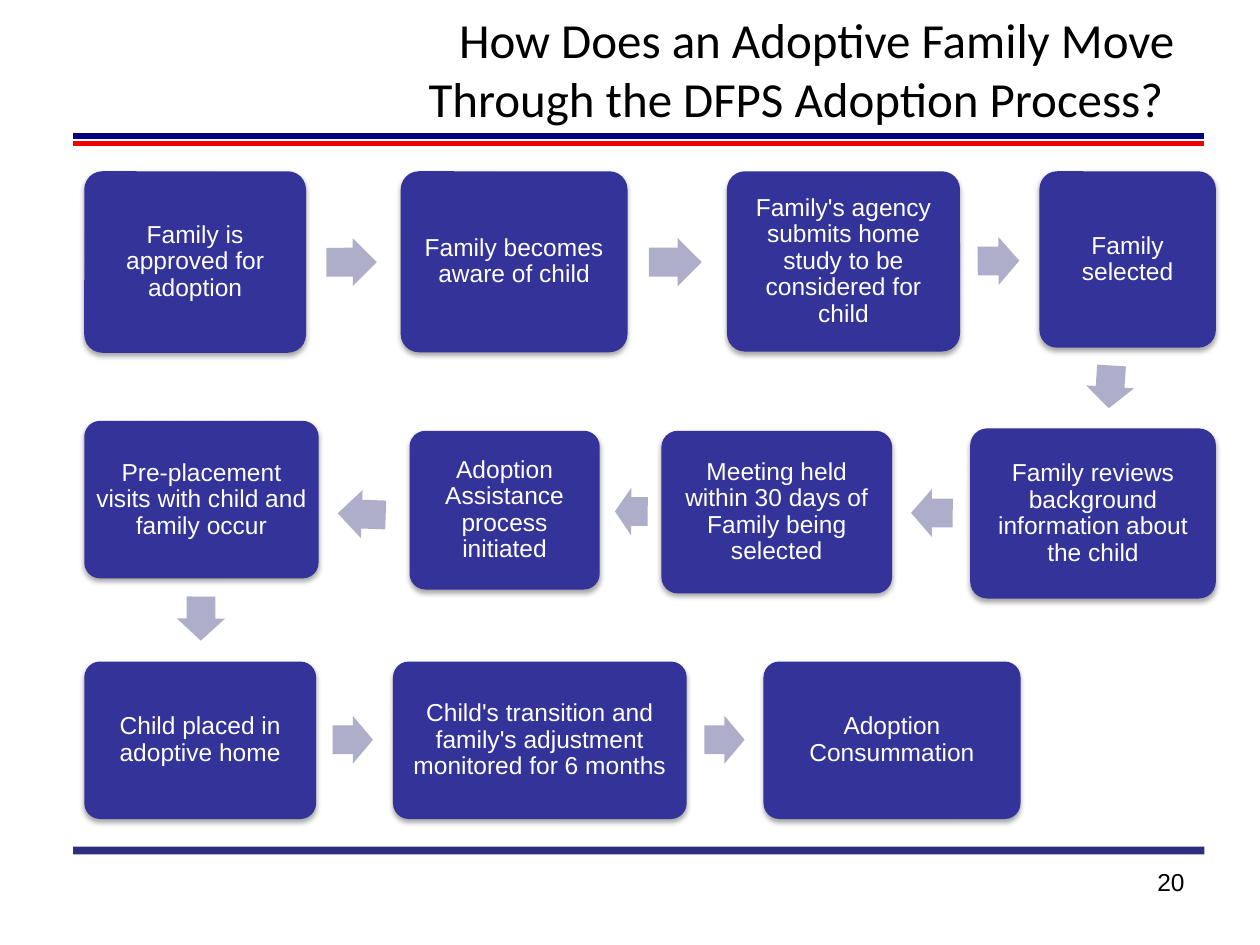
"""Builds a slide showing the adoption process as a winding chain of steps."""
from lxml.etree import SubElement
from pptx import Presentation
from pptx.dml.color import RGBColor
from pptx.enum.shapes import MSO_CONNECTOR as CONNECTOR, MSO_SHAPE as SHAPE
from pptx.enum.text import MSO_ANCHOR as ANCHOR, MSO_AUTO_SIZE as AUTO_SIZE, PP_ALIGN as ALIGN
from pptx.oxml.ns import qn
from pptx.util import Pt

TITLE = "How Does an Adoptive Family Move Through the DFPS Adoption Process? "
PAGE_NUMBER = "20"

# label, (left, top, width, height)
STEPS = [
    ("Family is approved for adoption", (48.2, 97.9, 126.7, 103.7)),
    ("Family becomes aware of child", (229, 97.9, 129.6, 103.4)),
    ("Family's agency submits home study to be considered for child", (415.4, 97.9, 133.2, 103)),
    ("Family selected", (594, 97.9, 100.8, 100.8)),
    ("Family reviews background information about the child", (554.4, 244.8, 140.4, 97.2)),
    ("Meeting held within 30 days of Family being selected", (378, 246.2, 131.8, 92.9)),
    ("Adoption Assistance process initiated", (234, 246.2, 108.7, 90.7)),
    ("Pre-placement visits with child and family occur", (48.2, 240.5, 133.9, 90)),
    ("Child placed in adoptive home", (48.2, 378, 132.5, 90)),
    ("Child's transition and family's adjustment monitored for 6 months", (224.6, 378, 167.8, 90)),
    ("Adoption Consummation", (436.3, 378, 146.9, 90)),
]

# left, top, length, rotation
ARROWS = [
    (186.5, 136.1, 28.8, 359.9),
    (370.8, 136.1, 30.2, 0),
    (558.7, 135.4, 23.8, 359.5),
    (622.1, 207.4, 24.5, 93.6),
    (520.6, 279.4, 23.8, 180.2),
    (351.4, 278.6, 18.7, 180.4),
    (193, 280.1, 27.4, 182),
    (102.2, 339.8, 25.2, 90.4),
    (190.1, 409, 23, 0),
    (402.5, 409, 23, 0),
]
ARROW_HEIGHT = 27.4

# y, colour, width, opacity in percent
RULES = [(77.8, "000080", 3, 100), (82.1, "F00000", 3, 100), (486, "000066", 4.5, 82)]
RULE_LEFT, RULE_RIGHT = 41.8, 688.3


def color(value):
    return RGBColor.from_string(value)


def set_alpha(color_element, percent):
    SubElement(color_element, qn("a:alpha"), val=str(percent * 1000))


def format_text(frame, text, size, font, value, align):
    frame.word_wrap = True
    frame.text = text
    paragraph = frame.paragraphs[0]
    paragraph.alignment = align
    paragraph.font.size = Pt(size)
    paragraph.font.name = font
    paragraph.font.color.rgb = color(value)
    return paragraph


def add_rule(slide, y, value, width, opacity):
    rule = slide.shapes.add_connector(
        CONNECTOR.STRAIGHT, Pt(RULE_LEFT), Pt(y), Pt(RULE_RIGHT), Pt(y))
    rule.line.color.rgb = color(value)
    rule.line.width = Pt(width)
    properties = rule._element.spPr
    if opacity < 100:
        set_alpha(properties.find(".//" + qn("a:srgbClr")), opacity)
    SubElement(properties, qn("a:effectLst"))


def add_filled_shape(slide, kind, bounds, value):
    shape = slide.shapes.add_shape(kind, *map(Pt, bounds))
    shape.shadow.inherit = False
    shape.fill.solid()
    shape.fill.fore_color.rgb = color(value)
    shape.line.fill.background()
    return shape


def add_step(slide, label, bounds):
    shape = add_filled_shape(slide, SHAPE.ROUNDED_RECTANGLE, bounds, "333399")
    shape.adjustments[0] = 0.1
    effects = shape._element.spPr.find(qn("a:effectLst"))
    shadow = SubElement(effects, qn("a:outerShdw"), blurRad=str(Pt(3.1)), dist=str(Pt(1.8)),
                        dir="5400000", rotWithShape="0")
    set_alpha(SubElement(shadow, qn("a:srgbClr"), val="000000"), 35)
    frame = shape.text_frame
    frame.margin_left = frame.margin_right = frame.margin_top = frame.margin_bottom = Pt(4.2)
    frame.vertical_anchor = ANCHOR.MIDDLE
    paragraph = format_text(frame, label, 14, "Arial", "FFFFFF", ALIGN.CENTER)
    paragraph.line_spacing = 0.9


def add_arrow(slide, left, top, length, rotation):
    arrow = add_filled_shape(
        slide, SHAPE.RIGHT_ARROW, (left, top, length, ARROW_HEIGHT), "AEAECA")
    arrow.adjustments[0] = 0.6
    arrow.adjustments[1] = 0.5
    arrow.rotation = rotation


def main():
    presentation = Presentation()
    presentation.slide_width, presentation.slide_height = Pt(720), Pt(540)
    slide = presentation.slides.add_slide(presentation.slide_layouts[5])

    for rule in RULES:
        add_rule(slide, *rule)

    title = slide.shapes.title
    title.left, title.top, title.width, title.height = map(Pt, (192.2, 0, 486, 77.8))
    title.text_frame.auto_size = AUTO_SIZE.NONE
    title.text_frame.vertical_anchor = ANCHOR.MIDDLE
    format_text(title.text_frame, TITLE, 28, "Calibri", "000000", ALIGN.RIGHT)

    number = slide.shapes.add_textbox(*map(Pt, (516.2, 491.8, 167.8, 37.4)))
    format_text(number.text_frame, PAGE_NUMBER, 14, "Arial", "000000", ALIGN.RIGHT)

    for label, bounds in STEPS:
        add_step(slide, label, bounds)
    for arrow in ARROWS:
        add_arrow(slide, *arrow)

    presentation.save("out.pptx")


if __name__ == "__main__":
    main()
